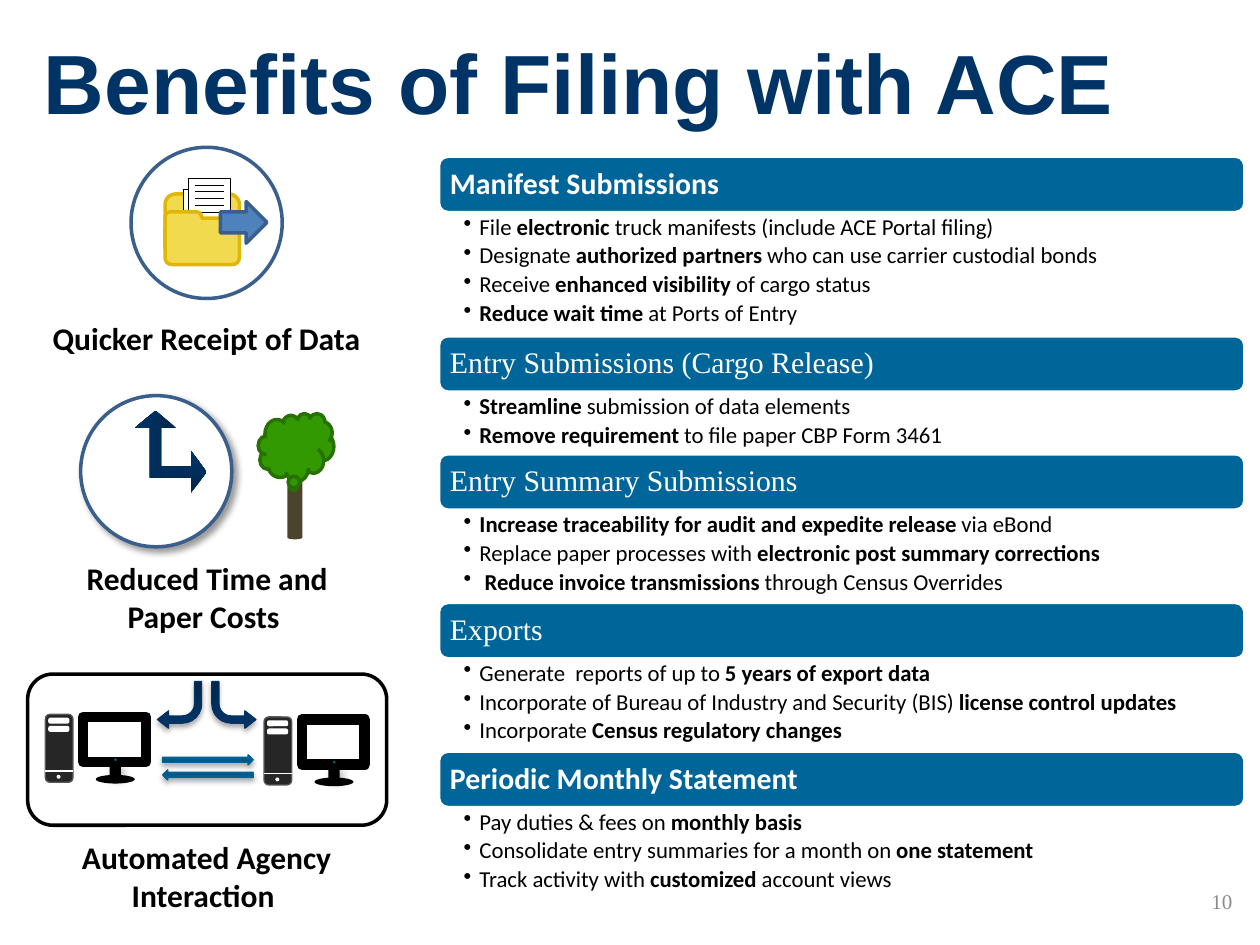
from dataclasses import dataclass
from math import hypot
from typing import Any, NamedTuple, Optional

from lxml.etree import SubElement
from pptx import Presentation
from pptx.dml.color import RGBColor
from pptx.enum.shapes import MSO_CONNECTOR, MSO_SHAPE
from pptx.enum.text import MSO_ANCHOR, PP_ALIGN
from pptx.oxml.ns import qn
from pptx.util import Pt


@dataclass(frozen=True)
class Theme:
    navy: str = "003366"
    teal: str = "006699"
    rim: str = "3A5F8C"
    arrow: str = "4F81BD"
    folder: str = "F1DA4D"
    folder_edge: str = "E1B707"
    tower: str = "262626"
    tower_edge: str = "595959"
    trunk: str = "4A452A"
    leaf: str = "339900"
    leaf_edge: str = "267100"
    white: str = "FFFFFF"
    black: str = "000000"
    grey: str = "8C8C8C"
    navy_blend: tuple = ("00264C", "003263")
    teal_blend: tuple = ("004C72", "006395")
    navy_edge: str = "003264"
    teal_edge: str = "006496"
    title_size: float = 48
    caption_size: float = 18
    heading_size: float = 17
    bullet_size: float = 13
    number_size: float = 12
    sans: str = "Calibri"
    serif: str = "Times New Roman"
    title_font: str = "Arial"


class Box(NamedTuple):
    left: float
    top: float
    width: float
    height: float


class Shadow(NamedTuple):
    opacity: int
    blur: float
    distance: float
    angle: int


@dataclass(frozen=True)
class Part:
    kind: Any
    box: Box
    fill: Any
    edge: Optional[str] = None
    weight: float = 0
    shadow: Optional[Shadow] = None
    turn: float = 0
    mirrored: bool = False
    adjust: tuple = ()


class Section(NamedTuple):
    heading: str
    font: str
    bold: bool
    benefits: tuple


class Caption(NamedTuple):
    text: str
    box: Box


THEME = Theme()
SOFT = Shadow(35, 3.1, 1.8, 90)
HEADING_HEIGHT, BULLET_HEIGHT = 32.2, 17.6

# Wording: ** switches bold on and off
SECTIONS = (
    Section("Manifest Submissions", THEME.sans, True, (
        "File **electronic** truck manifests (include ACE Portal filing)",
        "Designate **authorized partners **who can use carrier custodial bonds",
        "Receive **enhanced visibility **of cargo status",
        "**Reduce wait time **at Ports of Entry")),
    Section("Entry Submissions (Cargo Release)", THEME.serif, False, (
        "**Streamline** submission of data elements",
        "**Remove requirement **to file paper CBP Form 3461")),
    Section("Entry Summary Submissions", THEME.serif, False, (
        "**Increase traceability for audit and expedite release **via eBond",
        "Replace paper processes with **electronic post summary corrections**",
        " **Reduce invoice transmissions **through Census Overrides")),
    Section("Exports", THEME.serif, False, (
        "Generate  reports of up to **5 years of export data**",
        "Incorporate of Bureau of Industry and Security (BIS) **license control updates**",
        "Incorporate **Census regulatory changes**")),
    Section("Periodic Monthly Statement", THEME.sans, True, (
        "Pay duties & fees on **monthly basis**",
        "Consolidate entry summaries for a month on **one statement**",
        "Track activity with **customized** account views")),
)
CAPTIONS = (
    Caption("Quicker Receipt of Data", Box(15.8, 178.6, 204.5, 28.8)),
    Caption("Reduced Time and Paper Costs ", Box(37.4, 316, 162, 51)),
    Caption("Automated Agency Interaction ", Box(28.8, 475.2, 178.6, 51)),
)


def apply_format(target: Any, values: dict) -> None:
    for name, value in values.items():
        setattr(target, name, value)


def style(shape: Any, fill: Any, edge: Optional[str] = None, weight: float = 0) -> None:
    shape.shadow.inherit = False
    if isinstance(fill, tuple):
        shape.fill.gradient()
        shape.fill.gradient_angle = 90
        for stop, color, position in zip(shape.fill.gradient_stops, fill, (0, 0.8)):
            stop.color.rgb = RGBColor.from_string(color)
            stop.position = position
    else:
        shape.fill.solid()
        shape.fill.fore_color.rgb = RGBColor.from_string(fill)
    if edge:
        shape.line.color.rgb = RGBColor.from_string(edge)
        shape.line.width = Pt(weight)
    else:
        shape.line.fill.background()


def draw(group: Any, part: Part) -> Any:
    shape = group.shapes.add_shape(part.kind, *map(Pt, part.box))
    style(shape, part.fill, part.edge, part.weight)
    shape.rotation = part.turn
    for index, value in enumerate(part.adjust):
        shape.adjustments[index] = value
    if part.mirrored:
        shape.element.spPr.xfrm.set("flipH", "1")
    if part.shadow:
        effects = shape.element.spPr.find(qn("a:effectLst"))
        outer = SubElement(effects, qn("a:outerShdw"), blurRad=str(Pt(part.shadow.blur)),
                           dist=str(Pt(part.shadow.distance)),
                           dir=str(part.shadow.angle * 60000), rotWithShape="0")
        color = SubElement(outer, qn("a:srgbClr"), val=THEME.black)
        SubElement(color, qn("a:alpha"), val=str(part.shadow.opacity * 1000))
    return shape


def rule(group: Any, left: float, right: float, y: float, color: str, weight: float) -> None:
    line = group.shapes.add_connector(MSO_CONNECTOR.STRAIGHT, Pt(left), Pt(y), Pt(right), Pt(y))
    line.line.color.rgb = RGBColor.from_string(color)
    line.line.width = Pt(weight)
    SubElement(line.element.spPr, qn("a:effectLst"))


def write(paragraph: Any, text: str, font: str, size: float, color: str, bold: bool = False) -> None:
    for index, piece in enumerate(text.split("**")):
        if piece:
            run = paragraph.add_run()
            run.text = piece
            apply_format(run.font, {"name": font, "size": Pt(size), "bold": bold or index % 2 == 1})
            run.font.color.rgb = RGBColor.from_string(color)


def frame(shape: Any, insets: tuple, anchor: Any = MSO_ANCHOR.TOP) -> Any:
    sides = ("margin_left", "margin_top", "margin_right", "margin_bottom")
    apply_format(shape.text_frame, {"word_wrap": True, "vertical_anchor": anchor,
                                    **dict(zip(sides, map(Pt, insets)))})
    return shape.text_frame


def label(slide: Any, text: str, box: Box, font: str, size: float, color: str,
          align: Any, bold: bool = False, anchor: Any = MSO_ANCHOR.MIDDLE, spacing: float = 1.0) -> None:
    area = frame(slide.shapes.add_textbox(*map(Pt, box)), (7.2, 3.6, 7.2, 3.6), anchor)
    apply_format(area.paragraphs[0], {"alignment": align, "line_spacing": spacing})
    write(area.paragraphs[0], text, font, size, color, bold)


def rounded_outline(corners: list) -> list:
    points = []
    for index, (x, y, radius) in enumerate(corners):
        ends = []
        for px, py, _ in (corners[index - 1], corners[(index + 1) % len(corners)]):
            share = radius / hypot(px - x, py - y)
            ends.append((x + (px - x) * share, y + (py - y) * share))
        (ax, ay), (bx, by) = ends
        for t in (0, 0.25, 0.5, 0.75, 1) if radius else (0,):
            a, c, b = (1 - t) ** 2, 2 * t * (1 - t), t ** 2
            points.append((Pt(a * ax + c * x + b * bx), Pt(a * ay + c * y + b * by)))
    return points


def draw_folder(group: Any) -> None:
    draw(group, Part(MSO_SHAPE.OVAL, Box(74.9, 84.2, 86.4, 86.4), THEME.white, THEME.rim, 2))
    draw(group, Part(MSO_SHAPE.ROUNDED_RECTANGLE, Box(94.3, 110.9, 42.5, 36), THEME.folder, THEME.folder_edge, 2))
    for left, top in ((105.1, 108), (107.5, 102.2)):
        draw(group, Part(MSO_SHAPE.RECTANGLE, Box(left, top, 24.5, 31.7), THEME.white, THEME.black, 0.5))
    for row in range(7):
        rule(group, 111.6, 128.2, 105.8 + 3.85 * row, THEME.black, 0.5)
    start, *others = rounded_outline([(94.3, 121, 3.5), (115.2, 121, 3.5), (115.2, 124.6, 0),
                                      (136.8, 124.6, 4.5), (136.8, 151.2, 4.5), (94.3, 151.2, 4.5)])
    builder = group.shapes.build_freeform(*start)
    builder.add_line_segments(others, close=True)
    style(builder.convert_to_shape(), THEME.folder, THEME.folder_edge, 2)
    draw(group, Part(MSO_SHAPE.RIGHT_ARROW, Box(126, 115.2, 26.6, 23.8), THEME.arrow, THEME.rim, 2))


def draw_clock_and_tree(group: Any) -> None:
    for part in (
        Part(MSO_SHAPE.OVAL, Box(46.1, 226.1, 86.4, 86.4), THEME.white, THEME.rim, 2, Shadow(40, 4, 3, 45)),
        Part(MSO_SHAPE.RIGHT_ARROW, Box(89.3, 257.8, 28.8, 23.8), THEME.navy_blend, adjust=(0.267, 0.368)),
        Part(MSO_SHAPE.RIGHT_ARROW, Box(69.8, 241.9, 38.2, 23.8), THEME.navy_blend, turn=270, adjust=(0.267, 0.414)),
        Part(MSO_SHAPE.CAN, Box(164.2, 259.2, 8.6, 49), THEME.trunk),
        Part(MSO_SHAPE.CLOUD_CALLOUT, Box(147.6, 236.2, 43.2, 38.9), THEME.leaf, THEME.leaf_edge, 2,
             adjust=(-0.033, 0.585)),
    ):
        draw(group, part)


def draw_computer(group: Any, x: float, y: float) -> None:
    draw(group, Part(MSO_SHAPE.OVAL, Box(x + 28.8, y + 34.6, 22.3, 5), THEME.black))
    draw(group, Part(MSO_SHAPE.RECTANGLE, Box(x + 36.7, y + 28.8, 6.5, 7.2), THEME.black,
                     shadow=Shadow(30, 4.5, 2.6, 53)))
    draw(group, Part(MSO_SHAPE.RECTANGLE, Box(x + 21.6, y + 1.4, 36, 25.9), THEME.white, THEME.black, 6))
    draw(group, Part(MSO_SHAPE.OVAL, Box(x + 39.4, y + 25.2, 1.4, 1.4), THEME.teal))
    draw(group, Part(MSO_SHAPE.ROUNDED_RECTANGLE, Box(x, y, 15.8, 38.9), THEME.tower, THEME.tower_edge, 0.75))
    for drop in (2.9, 7.6):
        draw(group, Part(MSO_SHAPE.ROUNDED_RECTANGLE, Box(x + 2.7, y + drop, 10.1, 1.4), THEME.white, THEME.white, 2))
    rule(group, x, x + 15.8, y + 32.4, THEME.white, 0.75)
    draw(group, Part(MSO_SHAPE.OVAL, Box(x + 6.5, y + 34.6, 2.2, 2.2), THEME.white))


def draw_agencies(group: Any) -> None:
    draw(group, Part(MSO_SHAPE.ROUNDED_RECTANGLE, Box(15.8, 385.2, 205.2, 86.4), THEME.white, THEME.black, 2))
    for x, y in ((25.9, 408.2), (150.9, 409.7)):
        draw_computer(group, x, y)
    for top, turn in ((431.3, 0), (439.9, 180)):
        draw(group, Part(MSO_SHAPE.RIGHT_ARROW, Box(92.9, top, 51.8, 5.8), THEME.teal_blend,
                         THEME.teal_edge, 0.75, SOFT, turn))
    for left, mirrored in ((90, False), (121, True)):
        draw(group, Part(MSO_SHAPE.BENT_ARROW, Box(left, 389.5, 25.2, 26.6), THEME.navy_blend, THEME.navy_edge,
                         0.75, SOFT, 180, mirrored, (0.161, 0.196, 0.25, 0.438)))


def draw_section(group: Any, section: Section, top: float) -> float:
    bar = draw(group, Part(MSO_SHAPE.ROUNDED_RECTANGLE, Box(250.6, top, 460.8, HEADING_HEIGHT),
                           THEME.teal, THEME.white, 2))
    heading = frame(bar, (5, 5, 5, 5), MSO_ANCHOR.MIDDLE).paragraphs[0]
    apply_format(heading, {"alignment": PP_ALIGN.LEFT, "line_spacing": 0.9})
    write(heading, section.heading, section.font, THEME.heading_size, THEME.white, section.bold)

    top += HEADING_HEIGHT
    height = BULLET_HEIGHT * len(section.benefits)
    area = frame(group.shapes.add_textbox(*map(Pt, (250.6, top, 460.8, height))), (14.4, 1.6, 9.4, 1.6))
    for index, benefit in enumerate(section.benefits):
        paragraph = area.add_paragraph() if index else area.paragraphs[0]
        properties = paragraph._p.get_or_add_pPr()
        apply_format(paragraph, {"level": 1, "line_spacing": 0.9, "space_after": Pt(2.4)})
        properties.set("marL", str(Pt(9)))
        properties.set("indent", str(Pt(-9)))
        SubElement(properties, qn("a:buChar"), char="•")
        write(paragraph, benefit, THEME.sans, THEME.bullet_size, THEME.black)
    return top + height


def main() -> None:
    deck = Presentation()
    apply_format(deck, {"slide_width": Pt(720), "slide_height": Pt(540)})
    slide = deck.slides.add_slide(deck.slide_layouts[6])

    # Title and page number
    label(slide, "Benefits of Filing with ACE", Box(18, 18, 702, 64), THEME.title_font,
          THEME.title_size, THEME.navy, PP_ALIGN.LEFT, True, spacing=0.9)
    label(slide, "10", Box(647.3, 500.4, 64, 28.8), THEME.serif, THEME.number_size, THEME.grey, PP_ALIGN.RIGHT)

    # Icons with captions
    for draw_icon in (draw_folder, draw_clock_and_tree, draw_agencies):
        draw_icon(slide.shapes.add_group_shape())
    for caption in CAPTIONS:
        label(slide, caption.text, caption.box, THEME.sans, THEME.caption_size, THEME.black,
              PP_ALIGN.CENTER, True, MSO_ANCHOR.TOP)

    # Benefit sections
    benefits = slide.shapes.add_group_shape()
    top = 89.3
    for section in SECTIONS:
        top = draw_section(benefits, section, top)

    deck.save("out.pptx")


if __name__ == "__main__":
    main()
